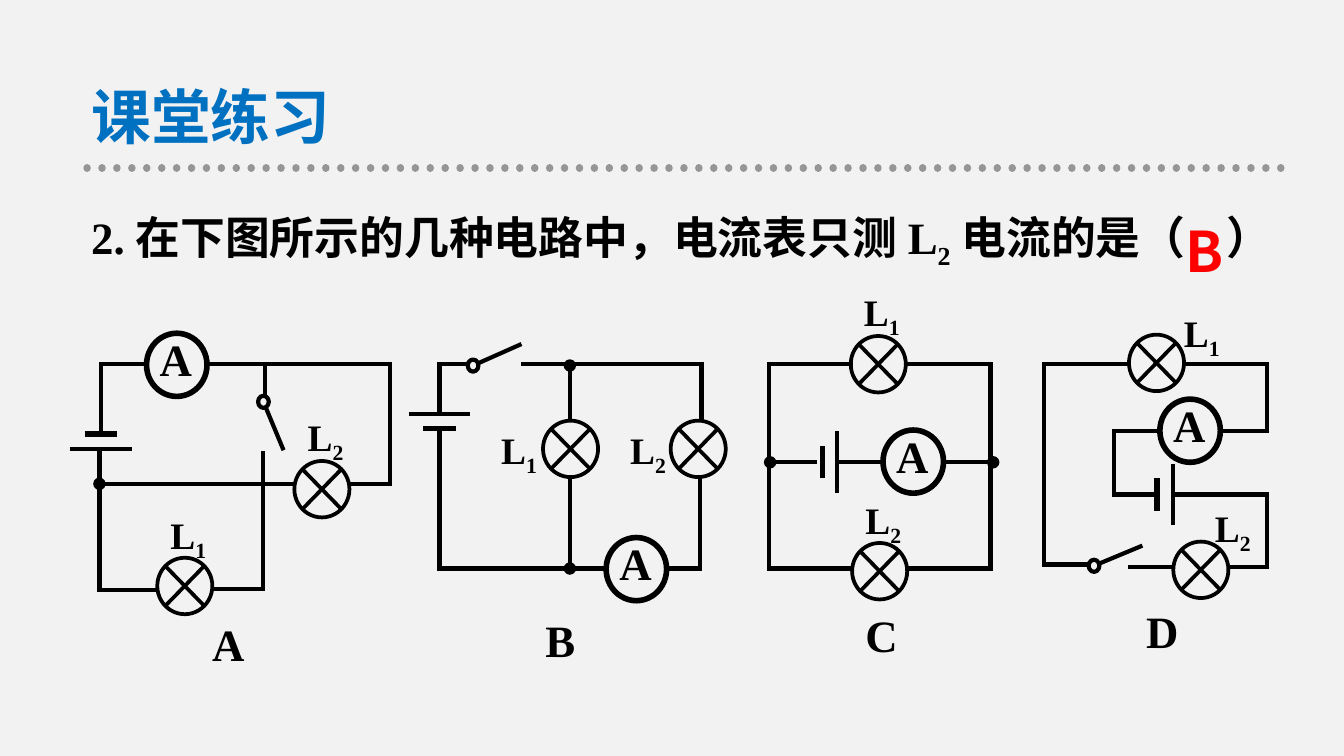
from itertools import pairwise
from math import hypot

from lxml.etree import SubElement
from pptx import Presentation
from pptx.dml.color import RGBColor
from pptx.enum.dml import MSO_LINE
from pptx.enum.shapes import MSO_CONNECTOR, MSO_SHAPE as Shape
from pptx.enum.text import MSO_ANCHOR, PP_ALIGN
from pptx.oxml.ns import qn
from pptx.util import Inches, Pt

BLACK = RGBColor(0x00, 0x00, 0x00)
BLUE = RGBColor(0x00, 0x70, 0xC0)
RED = RGBColor(0xFF, 0x00, 0x00)
GREY = RGBColor(0x96, 0x96, 0x96)
PALE = RGBColor(0xF2, 0xF2, 0xF2)
SERIF, CHINESE = "Times New Roman", "Noto Sans CJK SC"
WIRE, THICK, THIN = 2.25, 3, 2

TITLE = "课堂练习"
# Text, font, and whether the run is a subscript
QUESTION = [
    ("2.", SERIF, False),
    ("在下图所示的几种电路中，电流表只测", CHINESE, False),
    ("L", SERIF, False),
    ("2", SERIF, True),
    ("电流的是（    ）", CHINESE, False),
]
ANSWER = "B"

# Positions are in inches. Wires are polylines; a branch ends in a junction dot.
# Bulbs, meters, labels and options are placed by their top left corner,
# a cell by the centres of its long and short plates,
# a switch by the centre of its pivot and the tip of its arm.
CIRCUITS = [
    {
        "option": ("A", 1.48, 4.54),
        "wires": [
            [(1.08, 2.71), (0.75, 2.71), (0.75, 3.23)],
            [(0.74, 3.34), (0.74, 4.39), (1.15, 4.39)],
            [(2.61, 3.6), (2.9, 3.6), (2.9, 2.71), (1.55, 2.71)],
            [(1.97, 2.71), (1.97, 2.94)],
            [(1.96, 3.37), (1.96, 4.38), (1.6, 4.38)],
        ],
        "branches": [[(2.19, 3.6), (0.74, 3.6)]],
        "cell": [(0.75, 3.34), (0.75, 3.23)],
        "switch": [(1.96, 2.99), (2.11, 3.35)],
        "meter": (1.09, 2.48),
        "bulbs": [(1.17, 4.15), (2.19, 3.43)],
        "labels": [(1.17, 3.76), (2.19, 3.03)],
    },
    {
        "option": ("B", 3.96, 4.51),
        "wires": [
            [(3.48, 2.71), (3.27, 2.71), (3.27, 3.07)],
            [(3.27, 3.19), (3.27, 4.23), (4.5, 4.23)],
            [(3.89, 2.71), (5.22, 2.71), (5.22, 3.11)],
            [(5.21, 3.56), (5.21, 4.23), (4.98, 4.23)],
        ],
        "branches": [[(4.24, 3.12), (4.24, 2.72)], [(4.24, 3.56), (4.24, 4.23)]],
        "cell": [(3.27, 3.08), (3.27, 3.19)],
        "switch": [(3.52, 2.72), (3.88, 2.56)],
        "meter": (4.51, 4.0),
        "bulbs": [(4.04, 3.13), (4.99, 3.13)],
        "labels": [(3.63, 3.13), (4.59, 3.13)],
    },
    {
        "option": ("C", 6.34, 4.47),
        "wires": [
            [(6.33, 2.71), (5.72, 2.71), (5.72, 4.23), (6.34, 4.23)],
            [(6.75, 2.71), (7.37, 2.71), (7.37, 4.23), (6.75, 4.23)],
            [(6.23, 3.44), (6.57, 3.44)],
        ],
        "branches": [[(6.08, 3.44), (5.73, 3.44)], [(7.03, 3.44), (7.39, 3.44)]],
        "cell": [(6.23, 3.44), (6.12, 3.44)],
        "meter": (6.57, 3.2),
        "bulbs": [(6.33, 2.5), (6.34, 4.04)],
        "labels": [(6.33, 2.1), (6.34, 3.65)],
    },
    {
        "option": ("D", 8.43, 4.44),
        "wires": [
            [(8.4, 2.71), (7.77, 2.71), (7.77, 4.2), (8.09, 4.2)],
            [(8.82, 2.71), (9.43, 2.71), (9.43, 3.21), (9.09, 3.21)],
            [(8.63, 3.21), (8.29, 3.21), (8.29, 3.68), (8.6, 3.68)],
            [(8.74, 3.68), (9.43, 3.68), (9.43, 4.22), (9.17, 4.22)],
            [(8.41, 4.22), (8.73, 4.22)],
        ],
        "branches": [],
        "cell": [(8.73, 3.68), (8.61, 3.68)],
        "switch": [(8.14, 4.21), (8.5, 4.06)],
        "meter": (8.63, 2.97),
        "bulbs": [(8.4, 2.49), (8.73, 4.03)],
        "labels": [(8.71, 2.26), (8.94, 3.71)],
    },
]


def add_line(shapes, start, end, width=WIRE, color=BLACK, cap="flat", dot=False):
    line = shapes.add_connector(
        MSO_CONNECTOR.STRAIGHT, *map(Inches, (*start, *end)))
    line.line.color.rgb = color
    line.line.width = Pt(width)
    outline = line.line._get_or_add_ln()
    outline.set("cap", cap)
    if dot:
        SubElement(outline, qn("a:tailEnd"), type="oval")
    SubElement(line._element.spPr, qn("a:effectLst"))
    return line


def add_symbol(shapes, kind, left, top, width, height, weight):
    symbol = shapes.add_shape(kind, *map(Inches, (left, top, width, height)))
    symbol.shadow.inherit = False
    symbol.fill.background()
    symbol.line.color.rgb = BLACK
    symbol.line.width = Pt(weight)


def add_span(para, text, font, subscript=False):
    span = para.add_run()
    span.text = text
    span.font.name = font
    properties = span.font._element
    if font == CHINESE:
        SubElement(properties, qn("a:ea"), typeface=font)
    if subscript:
        properties.set("baseline", "-25000")


def write(frame, spans, size, color=BLACK):
    para = frame.paragraphs[0]
    para.font.size = Pt(size)
    para.font.bold = True
    para.font.color.rgb = color
    for span in spans:
        add_span(para, *span)
    return para


def add_text(shapes, spans, left, top, width, height, size, color=BLACK, wrap=True):
    box = shapes.add_textbox(*map(Inches, (left, top, width, height)))
    box.text_frame.word_wrap = wrap
    return write(box.text_frame, spans, size, color)


def add_cell(shapes, long_plate, short_plate):
    """Draw both plates at right angles to the line between their centres."""
    upright = long_plate[1] == short_plate[1]
    for (x, y), half, width in ((long_plate, 0.23, WIRE), (short_plate, 0.12, THICK)):
        dx, dy = (0, half) if upright else (half, 0)
        add_line(shapes, (x - dx, y - dy), (x + dx, y + dy), width)


def add_switch(shapes, pivot, tip):
    x, y = pivot
    reach = 0.05 / hypot(tip[0] - x, tip[1] - y)
    start = (x + reach * (tip[0] - x), y + reach * (tip[1] - y))
    add_line(shapes, start, tip)
    add_symbol(shapes, Shape.OVAL, x - 0.04, y - 0.045, 0.08, 0.09, WIRE)


def add_circuit(slide, circuit):
    shapes = slide.shapes.add_group_shape().shapes
    for wire in circuit["wires"]:
        for start, end in pairwise(wire):
            add_line(shapes, start, end, cap="sq")
    for start, end in circuit["branches"]:
        add_line(shapes, start, end, dot=True)
    add_cell(shapes, *circuit["cell"])
    if "switch" in circuit:
        add_switch(shapes, *circuit["switch"])
    left, top = circuit["meter"]
    add_symbol(shapes, Shape.OVAL, left, top, 0.45, 0.47, THICK)
    add_text(shapes, [("A", SERIF)], left, top - 0.06, 0.38, 0.5, 24)
    for bulb in circuit["bulbs"]:
        add_symbol(shapes, Shape.FLOWCHART_SUMMING_JUNCTION, *bulb, 0.41, 0.42, THIN)
    for number, place in enumerate(circuit["labels"], start=1):
        spans = [("L", SERIF), (str(number), SERIF, True)]
        add_text(shapes, spans, *place, 0.48, 0.44, 20, wrap=False)
    letter, left, top = circuit["option"]
    add_text(slide.shapes, [(letter, SERIF)], left, top, 0.38, 0.5, 24)


deck = Presentation()
deck.slide_width = Inches(10)
deck.slide_height = deck.slide_width * 9 // 16
slide = deck.slides.add_slide(deck.slide_layouts[5])
slide.background.fill.solid()
slide.background.fill.fore_color.rgb = PALE

title = slide.shapes.title
title.left, title.top, title.width, title.height = map(Inches, (0.58, 0.54, 6.23, 0.64))
title.text_frame.vertical_anchor = MSO_ANCHOR.TOP
heading = write(title.text_frame, [(TITLE, CHINESE)], 32, BLUE)
heading.alignment = PP_ALIGN.LEFT
heading.space_after = Pt(6)

rule = add_line(slide.shapes, (9.53, 1.25), (0.62, 1.25), 4, GREY, cap="rnd")
rule.line.dash_style = MSO_LINE.ROUND_DOT

question = add_text(slide.shapes, QUESTION, 0.58, 1.55, 9.22, 1.78, 24)
question.line_spacing = Pt(30)
for circuit in CIRCUITS:
    add_circuit(slide, circuit)
add_text(slide.shapes, [(ANSWER, CHINESE)], 8.72, 1.56, 0.45, 0.6, 30, RED)

deck.save("out.pptx")
